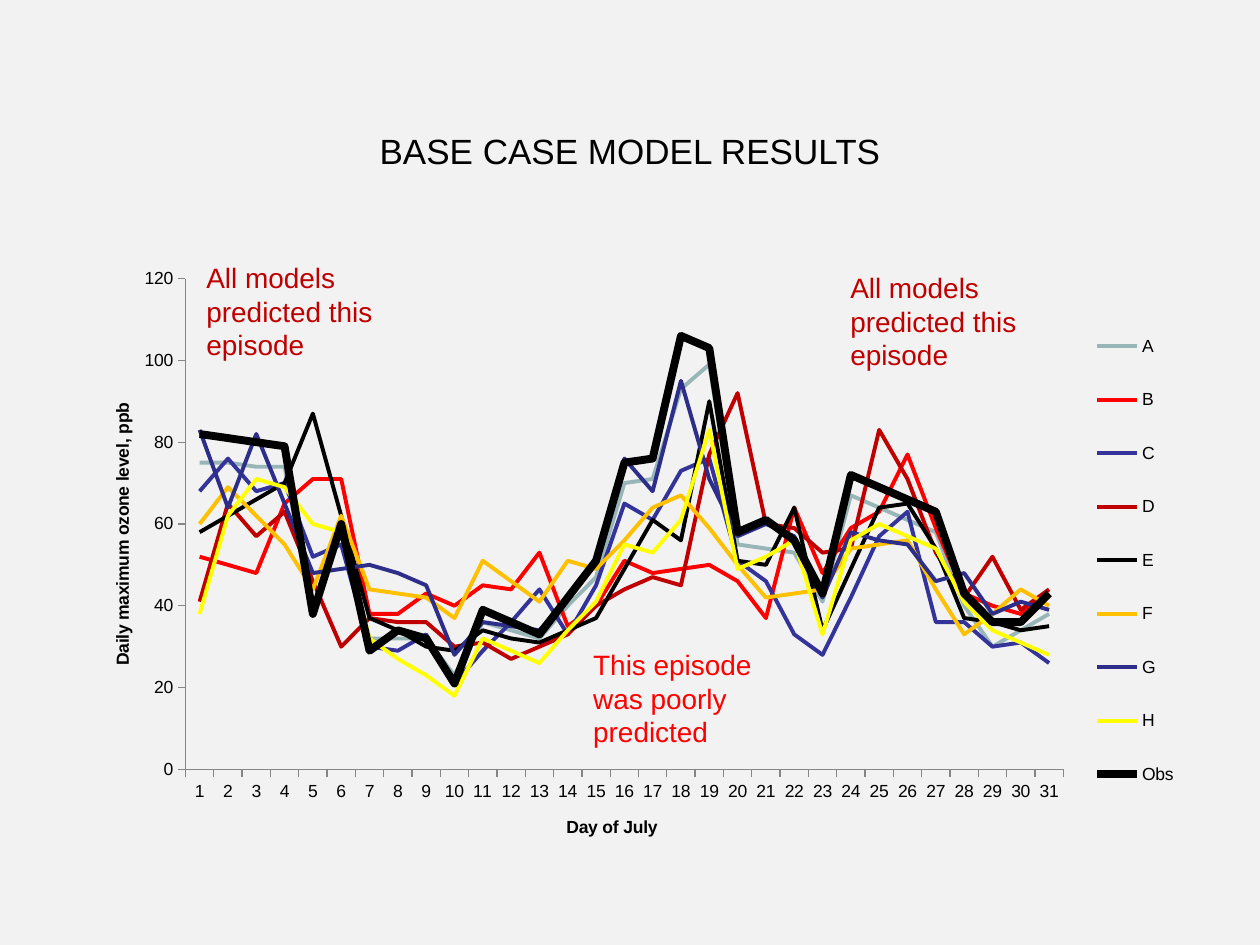
from lxml.etree import SubElement
from pptx import Presentation
from pptx.chart.data import CategoryChartData
from pptx.dml.color import RGBColor
from pptx.enum.chart import XL_CHART_TYPE, XL_LEGEND_POSITION, XL_MARKER_STYLE, XL_TICK_MARK
from pptx.enum.text import MSO_ANCHOR, MSO_AUTO_SIZE, PP_ALIGN
from pptx.oxml import parse_xml
from pptx.oxml.ns import nsdecls, qn
from pptx.util import Pt

FONT = "Arial"
BLACK = "000000"
GAP = None
SERIES = {
    "A": ("98B5B8", [75, GAP, GAP, 74, 38, 58, 32, GAP, 32, 23, 36, GAP, 32, GAP, 47, 70,
                     71, 93, 99, 55, GAP, 53, 41, 67, GAP, GAP, 58, 40, 30, GAP, 38]),
    "B": ("FF0000", [52, GAP, 48, 65, 71, 71, 38, 38, 43, 40, 45, 44, 53, 35, 40, 51,
                     48, GAP, 50, 46, 37, 64, 48, 59, 63, 77, 59, 43, GAP, 38, 43]),
    "C": ("333399", [68, 76, 68, 70, 52, 55, 30, 29, 33, 21, GAP, GAP, 44, 33, 45, 65,
                     61, 73, 76, 51, 46, 33, 28, GAP, 57, 63, 36, 36, 30, 31, 26]),
    "D": ("C00000", [41, 65, 57, 63, GAP, 30, 37, GAP, 36, 30, 31, 27, GAP, 33, 40, GAP,
                     47, 45, 77, 92, 60, 59, 53, 54, 83, 71, 53, 42, 52, 39, 44]),
    "E": (BLACK, [58, GAP, GAP, 70, 87, GAP, 37, GAP, 30, 29, 34, GAP, 31, GAP, 37, GAP,
                  61, 56, 90, 51, 50, 64, 34, GAP, 64, 65, 54, 37, GAP, 34, 35]),
    "F": ("FFC000", [60, 69, GAP, 55, 44, 62, 44, GAP, 42, 37, 51, GAP, 41, 51, 49, GAP,
                     64, 67, GAP, GAP, 42, GAP, 44, 54, GAP, 56, 44, 33, GAP, 44, 40]),
    "G": ("2D2D8A", [83, 64, 82, GAP, 48, GAP, 50, GAP, 45, 28, 36, GAP, 34, GAP, 51, 76,
                     68, 95, 71, 57, 60, 57, 42, 58, GAP, 55, 46, 48, 38, 41, 39]),
    "H": ("FFFF00", [38, 62, 71, 69, 60, 58, 32, GAP, GAP, 18, 32, GAP, 26, GAP, 41, 55,
                     53, 61, 83, 49, GAP, 56, 33, 56, 60, GAP, 54, 41, 34, GAP, 28]),
    "Obs": (BLACK, [82, GAP, GAP, 79, 38, 60, 29, 34, 32, 21, 39, GAP, 33, GAP, 51, 75,
                    76, 106, 103, 58, 61, 56, 43, 72, GAP, GAP, 63, 43, 36, 36, 43]),
}


def rgb(value):
    return RGBColor.from_string(value)


def fill_gaps(values):
    known = [i for i, value in enumerate(values) if value is not GAP]
    filled = list(values)
    for start, end in zip(known, known[1:]):
        step = (values[end] - values[start]) / (end - start)
        for i in range(start + 1, end):
            filled[i] = round(values[start] + step * (i - start))
    return filled


def style_font(font, size, color, bold=False):
    font.name = FONT
    font.size = Pt(size)
    font.bold = bold
    font.color.rgb = rgb(color)


def set_layout(parent, index, inner=False, **fractions):
    for old in parent.findall(qn("c:layout")):
        parent.remove(old)
    layout = parse_xml(f"<c:layout {nsdecls('c')}><c:manualLayout/></c:layout>")
    manual = layout.find(qn("c:manualLayout"))
    if inner:
        SubElement(manual, qn("c:layoutTarget")).set("val", "inner")
    for key in "xy":
        SubElement(manual, qn(f"c:{key}Mode")).set("val", "edge")
    for key, value in fractions.items():
        SubElement(manual, qn(f"c:{key}")).set("val", str(value))
    parent.insert(index, layout)


def add_title(s, text):
    sp = s.shapes.title
    sp.left, sp.top, sp.width, sp.height = map(Pt, (54, 54.7, 612, 62.6))
    tf = sp.text_frame
    tf.text = text
    tf.vertical_anchor = MSO_ANCHOR.MIDDLE
    p = tf.paragraphs[0]
    p.alignment = PP_ALIGN.CENTER
    style_font(p.font, 20, BLACK)


def add_note(s, left, top, width, text, color):
    tf = s.shapes.add_textbox(Pt(left), Pt(top), Pt(width), Pt(65.5)).text_frame
    tf.word_wrap = True
    tf.auto_size = MSO_AUTO_SIZE.SHAPE_TO_FIT_TEXT
    p = tf.paragraphs[0]
    p.text = text
    style_font(p.font, 16, color)


def format_axis(axis, title, x, y):
    axis.has_major_gridlines = False
    axis.major_tick_mark = XL_TICK_MARK.OUTSIDE
    axis.minor_tick_mark = XL_TICK_MARK.NONE
    axis.format.line.color.rgb = rgb("868686")
    tf = axis.axis_title.text_frame
    tf.text = title
    style_font(tf.paragraphs[0].font, 10, BLACK, bold=True)
    set_layout(axis.axis_title._element, 1, x=x, y=y)


def add_ozone_chart(s):
    data = CategoryChartData()
    data.categories = [str(day) for day in range(1, 32)]
    for name, (_, values) in SERIES.items():
        data.add_series(name, fill_gaps(values))
    box = map(Pt, (42.5, 145.4, 635, 346.3))
    chart = s.shapes.add_chart(XL_CHART_TYPE.LINE, *box, data).chart
    chart.has_title = False
    style_font(chart.font, 10, BLACK)
    plot = chart.plots[0]
    plot.vary_by_categories = False
    for series in plot.series:
        series.smooth = False
        series.marker.style = XL_MARKER_STYLE.NONE
        line = series.format.line
        color, _ = SERIES[series.name]
        line.color.rgb = rgb(color)
        line.width = Pt(4.5 if series.name == "Obs" else 2.25)
    format_axis(chart.value_axis, "Daily maximum ozone level, ppb", 0.03, 0.24)
    format_axis(chart.category_axis, "Day of July", 0.44, 0.92)
    chart.has_legend = True
    chart.legend.position = XL_LEGEND_POSITION.RIGHT
    chart.legend.include_in_layout = False
    set_layout(chart.legend._element, 1, x=0.91, y=0.08, w=0.09, h=0.85)
    plot_area = chart._chartSpace.find(".//" + qn("c:plotArea"))
    set_layout(plot_area, 0, inner=True, x=0.1, y=0.04, w=0.79, h=0.81)


def main():
    prs = Presentation()
    prs.slide_width, prs.slide_height = Pt(720), Pt(540)
    s = prs.slides.add_slide(prs.slide_layouts[5])
    s.background.fill.solid()
    s.background.fill.fore_color.rgb = rgb("F2F2F2")
    add_title(s, "BASE CASE MODEL RESULTS")
    add_ozone_chart(s)
    for left, top in ((110.9, 145.4), (478.8, 151.2)):
        add_note(s, left, top, 113, "All models predicted this episode", "C00000")
    add_note(s, 331.9, 366.5, 108, "This episode was poorly predicted", "FF0000")
    prs.save("out.pptx")


if __name__ == "__main__":
    main()
